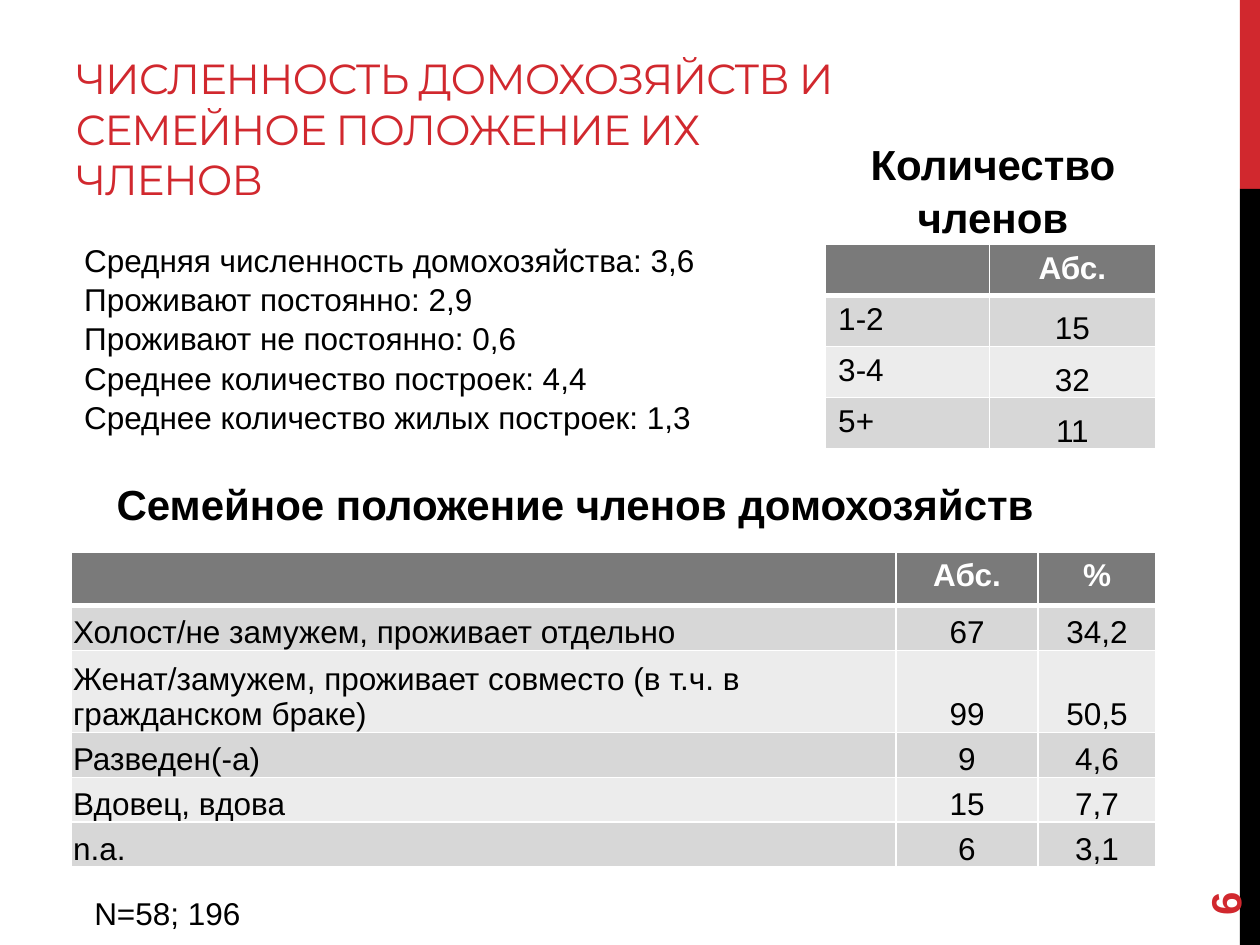
from lxml.etree import SubElement
from pptx import Presentation
from pptx.dml.color import RGBColor
from pptx.enum.shapes import MSO_SHAPE
from pptx.enum.text import MSO_ANCHOR, PP_ALIGN
from pptx.oxml.ns import qn
from pptx.util import Pt

COLORS = {
    "red": "D1282E", "black": "000000", "white": "FFFFFF",
    "header": "7A7A7A", "odd": "D7D7D7", "even": "ECECEC",
}
TITLE = "ЧИСЛЕННОСТЬ ДОМОХОЗЯЙСТВ И СЕМЕЙНОЕ ПОЛОЖЕНИЕ ИХ ЧЛЕНОВ"
BARS = [("red", (708.5, 0, 11.5, 108)), ("black", (708.5, 108, 11.5, 432))]
SUMMARY = [
    "Средняя численность домохозяйства: 3,6",
    "Проживают постоянно: 2,9",
    "Проживают не постоянно: 0,6",
    "Среднее количество построек: 4,4",
    "Среднее количество жилых построек: 1,3",
]
BODY = {"size": 18}
HEADING = {"size": 24, "bold": True, "align": PP_ALIGN.CENTER}
TEXTS = [
    (["N=58; 196"], (46.8, 507.6, 98.6, 28.8), BODY, {"word_wrap": False}),
    (["Семейное положение членов домохозяйств"], (41, 270, 575.3, 36.7), HEADING, {}),
    (SUMMARY, (41, 133.2, 375.1, 115.9), {**BODY, "spacing": 1.04}, {}),
    (["Количество членов"], (449.3, 74.2, 236.2, 65.5), {**HEADING, "spacing": 1.05}, {}),
    (["6"], (648, 463.7, 103.7, 28.8), {"size": 24, "bold": True, "color": "red"},
     {"vertical_anchor": MSO_ANCHOR.MIDDLE}),
]
TABLES = [
    {
        "position": (41, 315.4), "columns": [470.9, 81.4, 67.3],
        "heights": [30.6, 25.7, 46.8, 25.7, 25.7, 25.7], "tight_from": 0,
        "rows": [
            ("", "Абс.", "%"),
            ("Холост/не замужем, проживает отдельно", "67", "34,2"),
            ("Женат/замужем, проживает совместо (в т.ч. в гражданском браке)", "99", "50,5"),
            ("Разведен(-а)", "9", "4,6"),
            ("Вдовец, вдова", "15", "7,7"),
            ("n.a.", "6", "3,1"),
        ],
    },
    {
        "position": (471.8, 139.7), "columns": [93.5, 95],
        "heights": [29.2] * 4, "tight_from": 1,
        "rows": [("", "Абс."), ("1-2", "15"), ("3-4", "32"), ("5+", "11")],
    },
]
TIGHT = {
    "margin_left": Pt(0.75), "margin_right": Pt(0.75), "margin_top": Pt(0.75),
    "margin_bottom": 0, "vertical_anchor": MSO_ANCHOR.BOTTOM,
}


def color(name):
    return RGBColor.from_string(COLORS[name])


def set_attributes(target, values):
    for name, value in values.items():
        setattr(target, name, value)


def write(frame, lines, style, font="Arial"):
    for index, line in enumerate(lines):
        paragraph = frame.paragraphs[0] if index == 0 else frame.add_paragraph()
        set_attributes(paragraph, {
            "alignment": style.get("align", PP_ALIGN.LEFT),
            "line_spacing": style.get("spacing", 1.0),
        })
        if not line:
            paragraph.font.size = Pt(style["size"])
            continue
        run = paragraph.add_run()
        run.text = line
        set_attributes(run.font, {
            "name": font, "size": Pt(style["size"]), "bold": style.get("bold", False),
        })
        run.font.color.rgb = color(style.get("color", "black"))


def fill_cell(cell, fill, widths):
    properties = cell._tc.get_or_add_tcPr()
    for tag, width in widths.items():
        line = SubElement(properties, qn(f"a:{tag}"), w=str(Pt(width)))
        solid = SubElement(line, qn("a:solidFill"))
        SubElement(solid, qn("a:srgbClr"), val=COLORS["white"])
    cell.fill.solid()
    cell.fill.fore_color.rgb = color(fill)


def add_table(slide, data):
    rows, columns, heights = data["rows"], data["columns"], data["heights"]
    frame = slide.shapes.add_table(
        len(rows), len(columns), *map(Pt, (*data["position"], sum(columns), sum(heights))))
    table = frame.table
    for column, width in zip(table.columns, columns):
        column.width = Pt(width)
    for row, height in zip(table.rows, heights):
        row.height = Pt(height)
    for r, row in enumerate(rows):
        header = r == 0
        fill = "header" if header else "odd" if r % 2 else "even"
        widths = {"lnL": 1, "lnR": 1, "lnT": 3 if r == 1 else 1, "lnB": 3 if header else 1}
        for c, text in enumerate(row):
            cell = table.cell(r, c)
            fill_cell(cell, fill, widths)
            if not header and c >= data["tight_from"]:
                set_attributes(cell, TIGHT)
            write(cell.text_frame, [text], {
                "size": 18, "bold": header, "color": "white" if header else "black",
                "align": PP_ALIGN.CENTER if c else PP_ALIGN.LEFT,
            })


def main():
    presentation = Presentation()
    set_attributes(presentation, {"slide_width": Pt(720), "slide_height": Pt(540)})
    slide = presentation.slides.add_slide(presentation.slide_layouts[5])

    title = slide.shapes.title
    set_attributes(title, {
        "left": Pt(36), "top": Pt(12.2), "width": Pt(455.8), "height": Pt(108)})
    set_attributes(title.text_frame, {
        "word_wrap": True, "vertical_anchor": MSO_ANCHOR.BOTTOM})
    write(title.text_frame, [TITLE], {"size": 24, "color": "red"}, "Montserrat")
    title.text_frame.paragraphs[0].runs[0].font._element.set("spc", "-60")

    for name, box in BARS:
        bar = slide.shapes.add_shape(MSO_SHAPE.RECTANGLE, *map(Pt, box))
        bar.shadow.inherit = False
        bar.fill.solid()
        bar.fill.fore_color.rgb = color(name)
        bar.line.fill.background()

    for data in TABLES:
        add_table(slide, data)

    for lines, box, style, options in TEXTS:
        shape = slide.shapes.add_textbox(*map(Pt, box))
        set_attributes(shape.text_frame, {"word_wrap": True, **options})
        write(shape.text_frame, lines, style)
    page_number = shape
    page_number.rotation = 270

    presentation.save("out.pptx")


if __name__ == "__main__":
    main()
